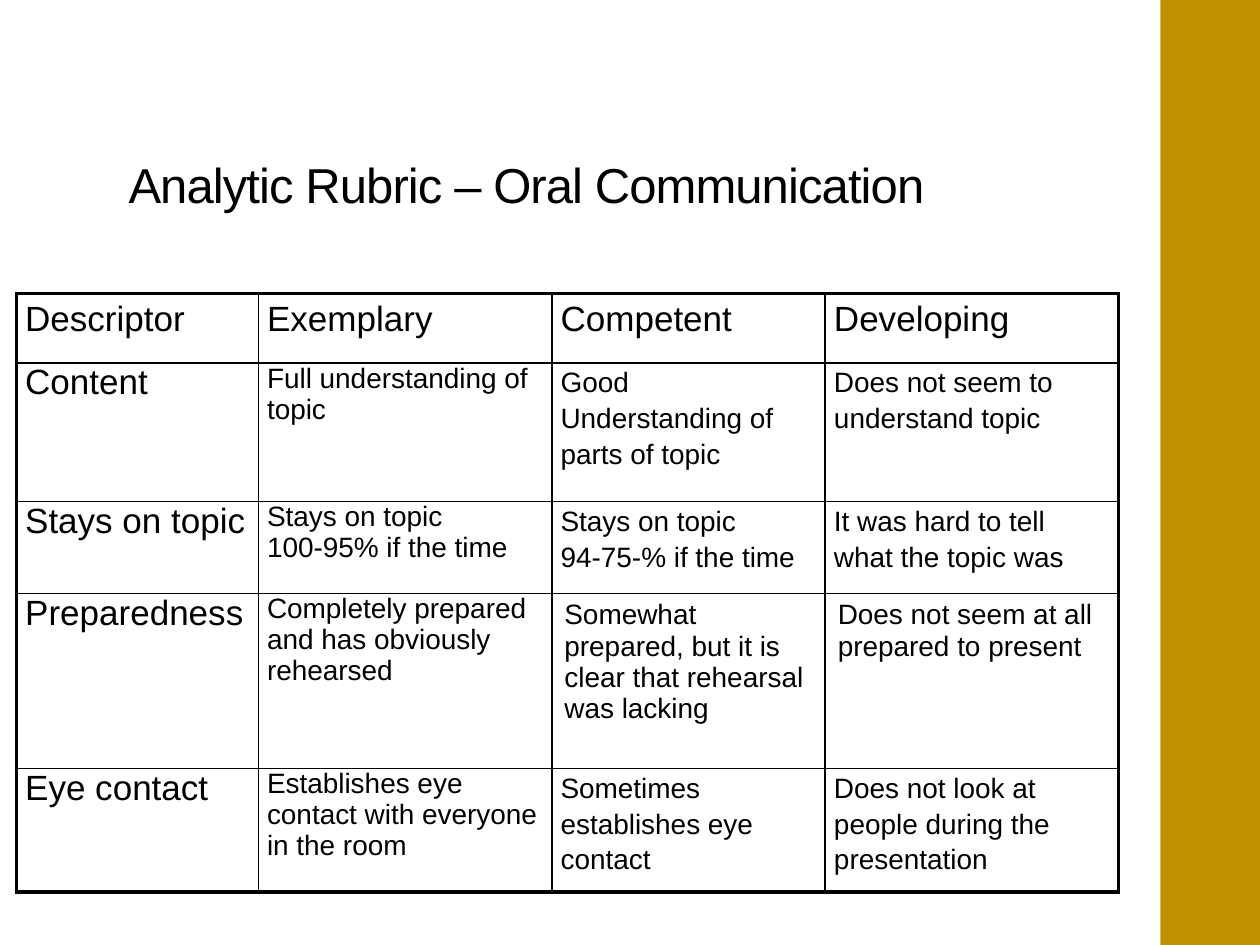
import dataclasses

import lxml.etree
import pptx
import pptx.dml.color
import pptx.enum.shapes
import pptx.enum.text
import pptx.oxml.ns
import pptx.util

Inches = pptx.util.Inches
Pt = pptx.util.Pt
qn = pptx.oxml.ns.qn


@dataclasses.dataclass(frozen=True)
class Theme:
    font: str = "Arial"
    ink: str = "000000"
    gold: str = "BF9000"
    title_size: float = 28
    label_size: float = 20
    body_size: float = 16
    inner_line: float = 1
    outer_line: float = 2.25
    title_spacing: float = 0.9
    loose_spacing: float = 1.15


@dataclasses.dataclass(frozen=True)
class Box:
    left: float
    top: float
    width: float
    height: float


THEME = Theme()
COLUMN_WIDTHS = [1.92, 2.33, 2.17, 2.33]
ROW_HEIGHTS = [0.55, 1.1, 0.73, 1.39, 0.98]
PREPAREDNESS_ROW = 3
RUBRIC = [
    ["Descriptor", "Exemplary", "Competent", "Developing"],
    ["Content", "Full understanding of topic",
     "Good Understanding of parts of topic",
     "Does not seem to understand topic"],
    ["Stays on topic", "Stays on topic\n100-95% if the time",
     "Stays on topic\n94-75-% if the time",
     "It was hard to tell what the topic was"],
    ["Preparedness", "Completely prepared and has obviously rehearsed",
     "Somewhat prepared, but it is clear that rehearsal was lacking",
     "Does not seem at all prepared to present"],
    ["Eye contact", "Establishes eye contact with everyone in the room",
     "Sometimes establishes eye contact",
     "Does not look at people during the presentation"],
]


def set_format(target, values):
    for name, value in values.items():
        setattr(target, name, value)


def place(shape, box):
    set_format(shape, {name: Inches(value)
                       for name, value in dataclasses.asdict(box).items()})


def write_text(frame, text, size, spacing):
    """Fill a text frame, one paragraph for each line of text."""
    frame.text = text
    for para in frame.paragraphs:
        set_format(para, {"alignment": pptx.enum.text.PP_ALIGN.LEFT,
                          "line_spacing": spacing})
        for span in para.runs:
            set_format(span.font, {"name": THEME.font, "size": Pt(size), "bold": False})
            span.font.color.rgb = pptx.dml.color.RGBColor.from_string(THEME.ink)


def add_sidebar(page, box):
    bar = page.shapes.add_shape(pptx.enum.shapes.MSO_SHAPE.RECTANGLE, 0, 0, 0, 0)
    place(bar, box)
    bar.shadow.inherit = False
    bar.fill.solid()
    bar.fill.fore_color.rgb = pptx.dml.color.RGBColor.from_string(THEME.gold)
    bar.line.fill.background()


def add_title(page, box, text):
    title = page.shapes.title
    place(title, box)
    frame = title.text_frame
    write_text(frame, text, THEME.title_size, THEME.title_spacing)
    set_format(frame, {"word_wrap": True,
                       "auto_size": pptx.enum.text.MSO_AUTO_SIZE.NONE,
                       "vertical_anchor": pptx.enum.text.MSO_ANCHOR.BOTTOM})
    # Tighten the letters by half a point
    frame.paragraphs[0].runs[0]._r.get_or_add_rPr().set("spc", "-50")


def add_borders(cell, widths):
    """Draw the cell's sides; widths maps L, R, T, B to points."""
    properties = cell._tc.get_or_add_tcPr()
    for side, width in widths.items():
        line = lxml.etree.SubElement(properties, qn(f"a:ln{side}"), w=str(Pt(width)))
        fill = lxml.etree.SubElement(line, qn("a:solidFill"))
        lxml.etree.SubElement(fill, qn("a:srgbClr"), val=THEME.ink)


def add_rubric(page, box, rows):
    frame = page.shapes.add_table(
        len(rows), len(rows[0]), Inches(box.left), Inches(box.top),
        Inches(box.width), Inches(box.height))
    table = frame.table
    set_format(table, {"first_row": False, "horz_banding": False})
    for column, width in zip(table.columns, COLUMN_WIDTHS):
        column.width = Inches(width)
    for row, height in zip(table.rows, ROW_HEIGHTS):
        row.height = Inches(height)

    last_row, last_column = len(rows) - 1, len(rows[0]) - 1
    for r, texts in enumerate(rows):
        for c, text in enumerate(texts):
            cell = table.cell(r, c)
            # Two cells in the preparedness row keep roomier margins
            roomy = r == PREPAREDNESS_ROW and c >= 2
            side, edge = (0.1, 0.05) if roomy else (0.07, 0)
            set_format(cell, {"margin_left": Inches(side), "margin_right": Inches(side),
                              "margin_top": Inches(edge), "margin_bottom": Inches(edge)})
            # Heavy lines run around the outside only
            outside = {"L": c == 0, "R": c == last_column,
                       "T": r == 0, "B": r == last_row}
            add_borders(cell, {name: THEME.outer_line if outer else THEME.inner_line
                               for name, outer in outside.items()})
            cell.fill.background()
            is_label = r == 0 or c == 0
            is_loose = r == 0 or (c >= 2 and not roomy)
            write_text(cell.text_frame, text,
                       THEME.label_size if is_label else THEME.body_size,
                       THEME.loose_spacing if is_loose else 1.0)


def main():
    deck = pptx.Presentation()
    set_format(deck, {"slide_width": Inches(10), "slide_height": Inches(7.5)})
    page = deck.slides.add_slide(deck.slide_layouts[5])
    add_sidebar(page, Box(9.21, 0, 0.79, 7.5))
    add_title(page, Box(0.92, 0.75, 8, 1), "Analytic Rubric – Oral Communication")
    add_rubric(page, Box(0.13, 2.33, sum(COLUMN_WIDTHS), sum(ROW_HEIGHTS)), RUBRIC)
    deck.save("out.pptx")


if __name__ == "__main__":
    main()
